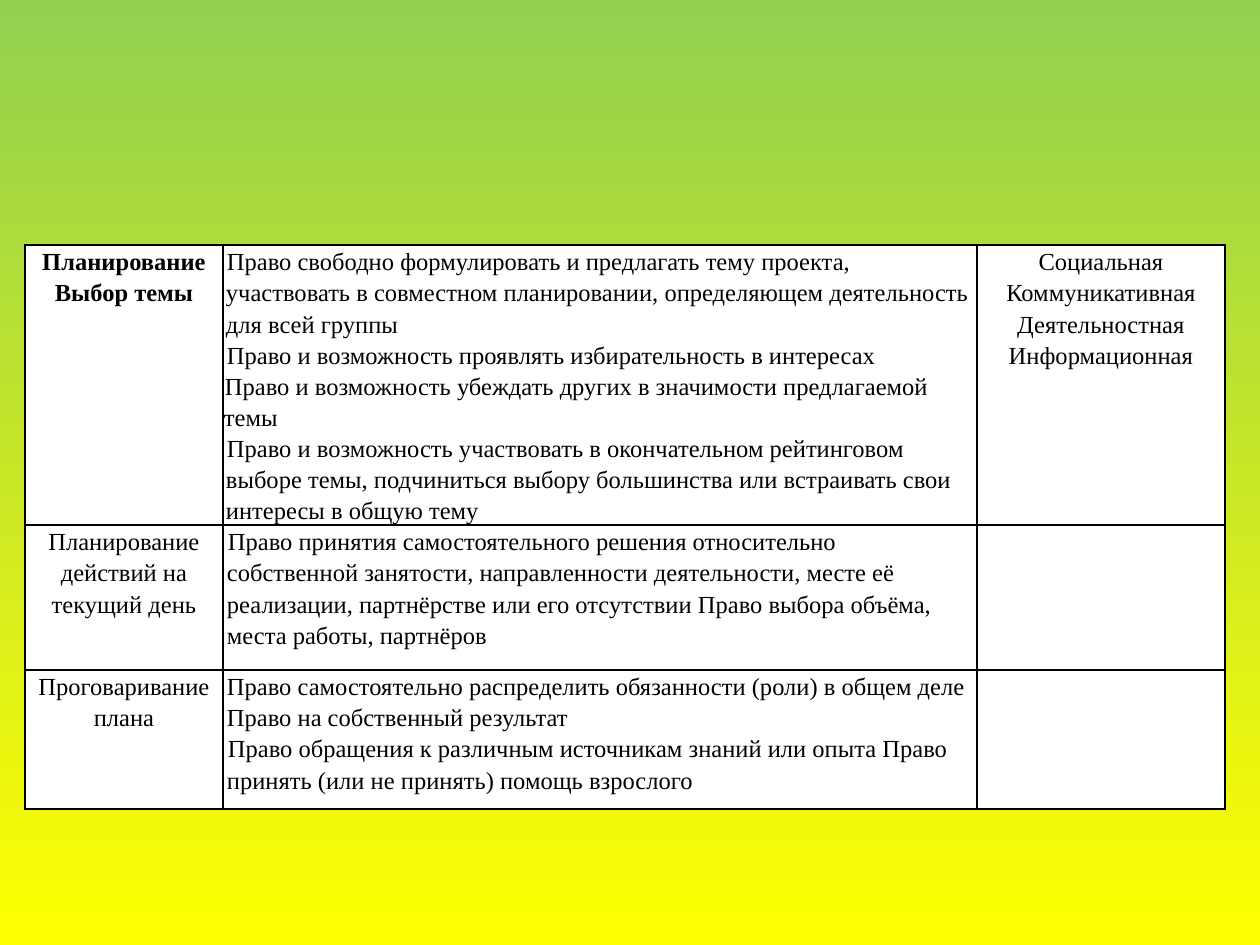
from lxml import etree
from pptx import Presentation
from pptx.dml.color import RGBColor
from pptx.enum.text import PP_ALIGN
from pptx.oxml.ns import qn
from pptx.util import Pt

LEFT, CENTER = PP_ALIGN.LEFT, PP_ALIGN.CENTER
PX = 914400 // 126

THEME = {
    "font": "Times New Roman", "size": 14, "spacing": 1.15,
    "text": "000000", "cell": "FFFFFF", "line": "000000", "weight": 1,
    "top": "92D050", "bottom": "FFFF00",
}

# Each stage: row height, side margin, bold label, label, rights, competences.
# Each right: left indent, first-line indent, text.
STAGES = [
    (227, 1, True, ["Планирование", "Выбор темы"], [
        (2, 1, "Право свободно формулировать и предлагать тему проекта, "
               "участвовать в совместном планировании, определяющем "
               "деятельность для всей группы"),
        (2, 1, "Право и возможность проявлять избирательность в интересах"),
        (0, 1, "Право и возможность убеждать других в значимости "
               "предлагаемой темы"),
        (2, 1, "Право и возможность участвовать в окончательном рейтинговом "
               "выборе темы, подчиниться выбору большинства или встраивать "
               "свои интересы в общую тему"),
    ], ["Социальная", "Коммуникативная", "Деятельностная", "Информационная"]),
    (145, 4, False, ["Планирование действий на текущий день"], [
        (0, 1, "Право принятия самостоятельного решения относительно "
               "собственной занятости, направленности деятельности, месте её "
               "реализации, партнёрстве или его отсутствии Право выбора "
               "объёма, места работы, партнёров"),
    ], []),
    (139, 4, False, ["Проговаривание плана"], [
        (0, 0, "Право самостоятельно распределить обязанности (роли) в общем "
               "деле Право на собственный результат"),
        (0, 1, "Право обращения к различным источникам знаний или опыта Право "
               "принять (или не принять) помощь взрослого"),
    ], []),
]
COLS = [198, 754, 248]
LEFT_X, TOP_Y = 25, 245


def color(key):
    return RGBColor.from_string(THEME[key])


def write(para, text, align=LEFT, bold=False, left=0, first=0):
    props = para._p.get_or_add_pPr()
    props.set("marL", str(left * PX))
    props.set("indent", str(first * PX))
    para.alignment = align
    para.line_spacing = THEME["spacing"]
    run = para.add_run()
    run.text = text
    font = run.font
    font.name, font.size, font.bold = THEME["font"], Pt(THEME["size"]), bold
    font.color.rgb = color("text")


def style(cell, side):
    """Set margins, borders and fill; borders must come before the fill."""
    cell.margin_left = cell.margin_right = side * PX
    cell.margin_top = cell.margin_bottom = 0
    props = cell._tc.get_or_add_tcPr()
    for edge in "LRTB":
        line = etree.SubElement(props, qn(f"a:ln{edge}"),
                                w=str(Pt(THEME["weight"])))
        fill = etree.SubElement(line, qn("a:solidFill"))
        etree.SubElement(fill, qn("a:srgbClr"), val=THEME["line"])
    cell.fill.solid()
    cell.fill.fore_color.rgb = color("cell")


def fill_cell(cell, side, items):
    style(cell, side)
    frame = cell.text_frame
    for i, (text, form) in enumerate(items):
        para = frame.add_paragraph() if i else frame.paragraphs[0]
        write(para, text, **form)


def paint(slide):
    fill = slide.background.fill
    fill.gradient()
    fill.gradient_angle = 270
    for stop, key, pos in zip(fill.gradient_stops, ("top", "bottom"), (0, 1)):
        stop.color.rgb = color(key)
        stop.position = pos


def build(slide):
    high = sum(stage[0] for stage in STAGES)
    table = slide.shapes.add_table(
        len(STAGES), len(COLS), LEFT_X * PX, TOP_Y * PX,
        sum(COLS) * PX, high * PX).table
    table.first_row = table.horz_banding = False
    for col, width in zip(table.columns, COLS):
        col.width = width * PX
    for row, stage in zip(table.rows, STAGES):
        height, side, bold, label, rights, skills = stage
        row.height = height * PX
        parts = [
            [(text, {"align": CENTER, "bold": bold}) for text in label],
            [(text, {"left": left, "first": first})
             for left, first, text in rights],
            [(text, {"align": CENTER}) for text in skills],
        ]
        for cell, items in zip(row.cells, parts):
            fill_cell(cell, side, items)


def main():
    deck = Presentation()
    deck.slide_width, deck.slide_height = 1260 * PX, 945 * PX
    slide = deck.slides.add_slide(deck.slide_layouts[6])
    paint(slide)
    build(slide)
    deck.save("out.pptx")


if __name__ == "__main__":
    main()
